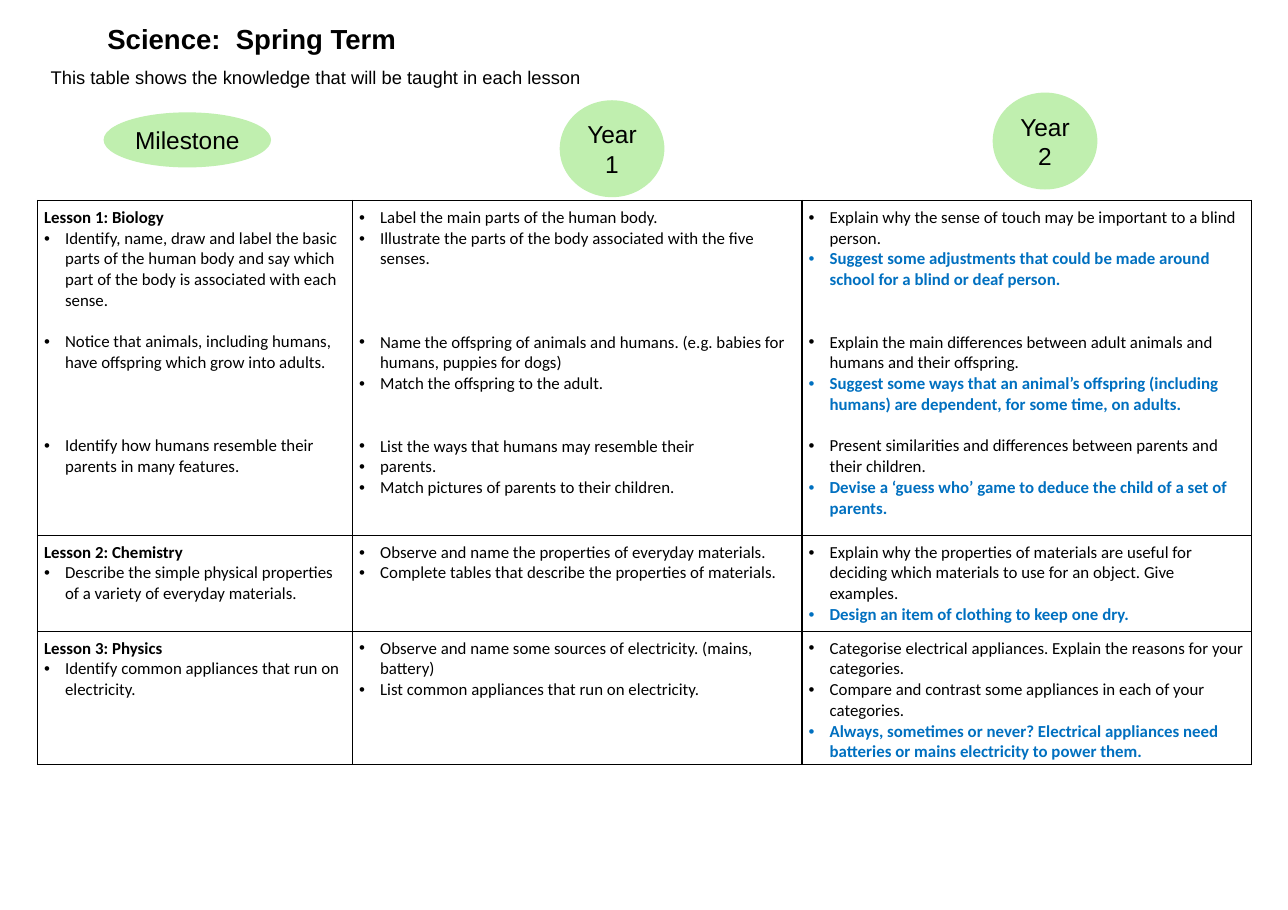
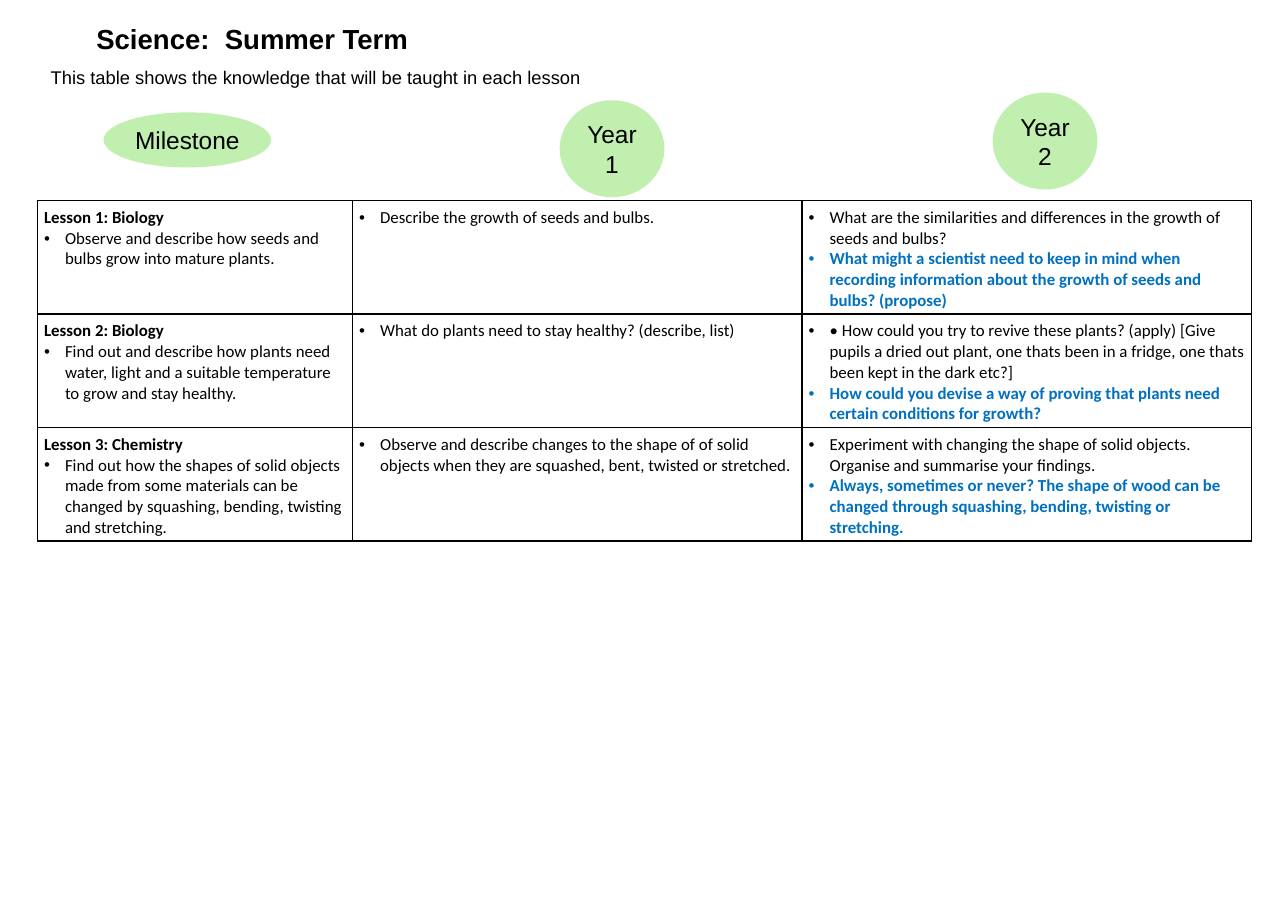
from dataclasses import dataclass

from lxml import etree
from pptx import Presentation
from pptx.dml.color import RGBColor
from pptx.enum.shapes import MSO_SHAPE
from pptx.enum.text import MSO_ANCHOR, MSO_AUTO_SIZE, PP_ALIGN
from pptx.oxml.ns import qn
from pptx.util import Emu, Pt

EMU_PER_PX = 9144
SLIDE_SIZE = (1169, 826)
BLANK_LAYOUT = 6

OVAL = MSO_SHAPE.OVAL
CENTER, LEFT = PP_ALIGN.CENTER, PP_ALIGN.LEFT
MIDDLE = MSO_ANCHOR.MIDDLE
GROW = MSO_AUTO_SIZE.SHAPE_TO_FIT_TEXT

BLACK, WHITE, BLUE, GREEN = "000000", "FFFFFF", "0070C0", "C0EFAF"
TITLE = {"name": "Arial", "size": Pt(18), "bold": True}
INTRO = {"name": "Arial", "size": Pt(12), "bold": False}
BADGE = {"name": "Arial", "size": Pt(16), "bold": False}
PLAIN = {"name": "Calibri", "size": Pt(11), "bold": False}
STRONG = {**PLAIN, "bold": True}

TEXT_INSET = 4
CELL_INSETS = {"margin_left": 6, "margin_right": 6, "margin_top": 6, "margin_bottom": 3}
BULLET_INDENT = 19
LINE_POINTS = 13.6
BORDER_SIDES = ("a:lnL", "a:lnR", "a:lnT", "a:lnB")

HEADER_BOX = (42, 15, 1043, 69)
BADGES_BOX = (34, 84, 1102, 95)
TABLE_LEFT_TOP = (34, 182)
COLUMN_WIDTHS = (286, 408, 408)
INTRO_TEXT = "This table shows the knowledge that will be taught in each lesson"
BADGES = (
    ("Year 2", (867, 0, 95, 88)),
    ("Year 1", (474, 7, 95, 88)),
    ("Milestone", (60, 18, 152, 50)),
)


@dataclass
class Entry:
    """One paragraph of a table cell, with the lines left free above it."""

    text: str
    gap: int = 0
    bullet: bool = True
    color: str = BLACK
    style: dict = None


def heading(text):
    """Return the bold name of a lesson."""
    return Entry(text, bullet=False, style=STRONG)


def challenge(text):
    """Return a bold blue task."""
    return Entry(text, color=BLUE, style=STRONG)


SPRING = (
    (304, (
        (
            heading("Lesson 1: Biology"),
            Entry("Identify, name, draw and label the basic parts of the human body and say "
                  "which part of the body is associated with each sense."),
            Entry("Notice that animals, including humans, have offspring which grow into adults.", 1),
            Entry("Identify how humans resemble their parents in many features.", 3),
        ),
        (
            Entry("Label the main parts of the human body."),
            Entry("Illustrate the parts of the body associated with the five senses."),
            Entry("Name the offspring of animals and humans. (e.g. babies for humans, "
                  "puppies for dogs)", 3),
            Entry("Match the offspring to the adult."),
            Entry("List the ways that humans may resemble their", 2),
            Entry("parents."),
            Entry("Match pictures of parents to their children."),
        ),
        (
            Entry("Explain why the sense of touch may be important to a blind person."),
            challenge("Suggest some adjustments that could be made around school for a blind "
                      "or deaf person."),
            Entry("Explain the main differences between adult animals and humans and their "
                  "offspring.", 2),
            challenge("Suggest some ways that an animal’s offspring (including humans) are "
                      "dependent, for some time, on adults."),
            Entry("Present similarities and differences between parents and their children.", 1),
            challenge("Devise a ‘guess who’ game to deduce the child of a set of parents."),
        ),
    )),
    (87, (
        (
            heading("Lesson 2: Chemistry"),
            Entry("Describe the simple physical properties of a variety of everyday materials."),
        ),
        (
            Entry("Observe and name the properties of everyday materials."),
            Entry("Complete tables that describe the properties of materials."),
        ),
        (
            Entry("Explain why the properties of materials are useful for deciding which "
                  "materials to use for an object. Give examples."),
            challenge("Design an item of clothing to keep one dry."),
        ),
    )),
    (121, (
        (
            heading("Lesson 3: Physics"),
            Entry("Identify common appliances that run on electricity."),
        ),
        (
            Entry("Observe and name some sources of electricity. (mains, battery)"),
            Entry("List common appliances that run on electricity."),
        ),
        (
            Entry("Categorise electrical appliances. Explain the reasons for your categories."),
            Entry("Compare and contrast some appliances in each of your categories."),
            challenge("Always, sometimes or never? Electrical appliances need batteries or "
                      "mains electricity to power them."),
        ),
    )),
)

SUMMER = (
    (103, (
        (
            heading("Lesson 1: Biology"),
            Entry("Observe and describe how seeds and bulbs grow into mature plants."),
        ),
        (Entry("Describe the growth of seeds and bulbs."),),
        (
            Entry("What are the similarities and differences in the growth of seeds and bulbs?"),
            challenge("What might a scientist need to keep in mind when recording information "
                      "about the growth of seeds and bulbs? (propose)"),
        ),
    )),
    (103, (
        (
            heading("Lesson 2: Biology"),
            Entry("Find out and describe how plants need water, light and a suitable "
                  "temperature to grow and stay healthy."),
        ),
        (Entry("What do plants need to stay healthy? (describe, list)"),),
        (
            Entry("• How could you try to revive these plants? (apply) [Give pupils a dried out "
                  "plant, one thats been in a fridge, one thats been kept in the dark etc?]"),
            challenge("How could you devise a way of proving that plants need certain "
                      "conditions for growth?"),
        ),
    )),
    (103, (
        (
            heading("Lesson 3: Chemistry"),
            Entry("Find out how the shapes of solid objects made from some materials can be "
                  "changed by squashing, bending, twisting and stretching."),
        ),
        (
            Entry("Observe and describe changes to the shape of of solid objects when they are "
                  "squashed, bent, twisted or stretched."),
        ),
        (
            Entry("Experiment with changing the shape of solid objects. Organise and summarise "
                  "your findings."),
            challenge("Always, sometimes or never? The shape of wood can be changed through "
                      "squashing, bending, twisting or stretching."),
        ),
    )),
)

TERMS = (
    ("Science:  Spring Term", (49, 0, 275, 39), SPRING),
    ("Science:  Summer Term", (39, 0, 296, 39), SUMMER),
)


def px(length):
    """Turn px into EMU."""
    return Emu(length * EMU_PER_PX)


def rgb(value):
    """Turn a hex string into a colour."""
    return RGBColor.from_string(value)


def set_values(target, values):
    """Set each named attribute of the target."""
    for name, value in values.items():
        setattr(target, name, value)


def place(box, part):
    """Return the EMU box of a part placed relative to its region."""
    left, top, width, height = part
    return [px(length) for length in (box[0] + left, box[1] + top, width, height)]


def write_run(paragraph, text, style, color=BLACK):
    """Add one formatted run to a paragraph."""
    run = paragraph.add_run()
    run.text = text
    set_values(run.font, style)
    run.font.color.rgb = rgb(color)


def write_label(shape, text, style, align, wrap=True):
    """Write one line of text into a shape that grows with it."""
    frame = shape.text_frame
    inset = px(TEXT_INSET)
    set_values(frame, {
        "margin_left": inset, "margin_right": inset, "margin_top": inset,
        "margin_bottom": inset, "vertical_anchor": MIDDLE, "word_wrap": wrap,
        "auto_size": GROW,
    })
    paragraph = frame.paragraphs[0]
    paragraph.alignment = align
    write_run(paragraph, text, style)


def add_header(slide, box, title, title_part):
    """Add the title and the introduction below it."""
    title_box = slide.shapes.add_textbox(*place(box, title_part))
    write_label(title_box, title, TITLE, CENTER, wrap=False)
    intro_box = slide.shapes.add_textbox(*place(box, (0, 41, box[2], 28)))
    write_label(intro_box, INTRO_TEXT, INTRO, LEFT)


def add_badges(slide, box):
    """Add the green ovals that name the columns."""
    for text, part in BADGES:
        badge = slide.shapes.add_shape(OVAL, *place(box, part))
        badge.shadow.inherit = False
        badge.fill.solid()
        badge.fill.fore_color.rgb = rgb(GREEN)
        badge.line.fill.background()
        write_label(badge, text, BADGE, CENTER)


def add_bullet(paragraph):
    """Give a paragraph a hanging bullet."""
    properties = paragraph._p.get_or_add_pPr()
    properties.set("marL", str(px(BULLET_INDENT)))
    properties.set("indent", str(-px(BULLET_INDENT)))
    etree.SubElement(properties, qn("a:buFont"), typeface="Arial")
    etree.SubElement(properties, qn("a:buChar"), char="•")


def format_cell(cell):
    """Give a cell its insets, black borders and white fill."""
    set_values(cell, {name: px(inset) for name, inset in CELL_INSETS.items()})
    properties = cell._tc.get_or_add_tcPr()
    for side in BORDER_SIDES:
        border = etree.SubElement(properties, qn(side), w=str(Pt(1)))
        fill = etree.SubElement(border, qn("a:solidFill"))
        etree.SubElement(fill, qn("a:srgbClr"), val=BLACK)
    cell.fill.solid()
    cell.fill.fore_color.rgb = rgb(WHITE)


def fill_cell(cell, entries):
    """Write the entries of one cell, a paragraph each."""
    format_cell(cell)
    frame = cell.text_frame
    for index, entry in enumerate(entries):
        paragraph = frame.add_paragraph() if index else frame.paragraphs[0]
        paragraph.space_before = Pt(entry.gap * LINE_POINTS)
        if entry.bullet:
            add_bullet(paragraph)
        write_run(paragraph, entry.text, entry.style or PLAIN, entry.color)


def add_lessons(slide, left_top, lessons):
    """Add the table of lessons, one row each."""
    size = (sum(COLUMN_WIDTHS), sum(height for height, _ in lessons))
    table = slide.shapes.add_table(
        len(lessons), len(COLUMN_WIDTHS), *place(left_top, (0, 0, *size))).table
    for column, width in zip(table.columns, COLUMN_WIDTHS):
        column.width = px(width)
    for row, (height, cells) in zip(table.rows, lessons):
        row.height = px(height)
        for cell, entries in zip(row.cells, cells):
            fill_cell(cell, entries)


def main():
    """Build one slide for each term."""
    presentation = Presentation()
    presentation.slide_width, presentation.slide_height = map(px, SLIDE_SIZE)
    for title, title_part, lessons in TERMS:
        slide = presentation.slides.add_slide(presentation.slide_layouts[BLANK_LAYOUT])
        add_header(slide, HEADER_BOX, title, title_part)
        add_lessons(slide, TABLE_LEFT_TOP, lessons)
        add_badges(slide, BADGES_BOX)
    presentation.save("out.pptx")


if __name__ == "__main__":
    main()
